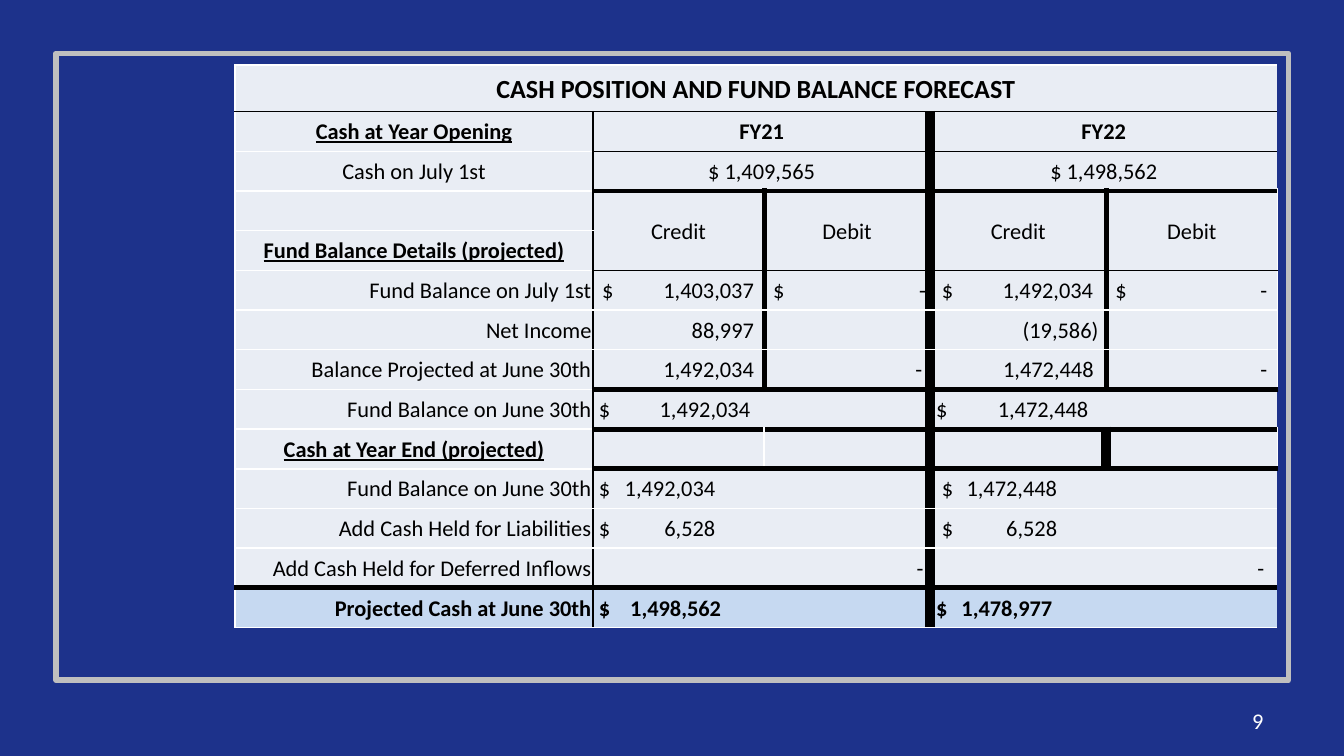
from lxml import etree
from pptx import Presentation
from pptx.dml.color import RGBColor
from pptx.enum import shapes, text
from pptx.oxml import ns
from pptx.util import Cm, Pt

NAVY = RGBColor(0x1D, 0x32, 0x8B)
GREY = RGBColor(0xBF, 0xBF, 0xBF)
PALE = RGBColor(0xE9, 0xED, 0xF4)
BLUE = RGBColor(0xC6, 0xD9, 0xF1)
BLACK = RGBColor(0, 0, 0)
WHITE = RGBColor(0xFF, 0xFF, 0xFF)
LEFT, MID, RIGHT = text.PP_ALIGN.LEFT, text.PP_ALIGN.CENTER, text.PP_ALIGN.RIGHT

WIDTHS = [6.77, 3.23, 3.14, 3.33, 3.23]
COUNT = 14
LAST = COUNT - 1
SPLIT = (3, 4, 5, 6, 7)
PAIRS = (1, 2, 8, 10, 11, 12, 13)
HEADS = {1: "Cash at Year Opening", 4: "Fund Balance Details (projected)",
         9: "Cash at Year End (projected)"}
LABELS = {5: "Fund Balance on July 1st", 6: "Net Income",
          7: "Balance Projected at June 30th", 8: "Fund Balance on June 30th",
          10: "Fund Balance on June 30th", 11: "Add Cash Held for Liabilities",
          12: "Add Cash Held for Deferred Inflows", 13: "Projected Cash at June 30th"}
CENTERED = [(2, 0, "Cash on July 1st"), (2, 1, "$ 1,409,565"), (2, 3, "$ 1,498,562"),
            (3, 1, "Credit"), (3, 2, "Debit"), (3, 3, "Credit"), (3, 4, "Debit")]
DOLLARS = [(5, 1, "1,403,037", 0.17, 3.04), (5, 2, "-", 0.17, 3.06),
           (5, 3, "1,492,034", 0.22, 3.08), (5, 4, "-", 0.17, 3.04),
           (8, 1, "1,492,034", 0.11, 2.97), (8, 3, "1,472,448", 0.11, 2.99),
           (10, 1, "1,492,034", 0.11, 2.31), (10, 3, "1,472,448", 0.22, 2.4),
           (11, 1, "6,528", 0.11, 2.31), (11, 3, "6,528", 0.22, 2.4),
           (13, 1, "1,498,562", 0.11, 2.42), (13, 3, "1,478,977", 0.11, 2.31)]
FIGURES = [(6, 1, "88,997", 0.19), (6, 3, "(19,586)", 0.15),
           (7, 1, "1,492,034", 0.19), (7, 2, "-", 0.15),
           (7, 3, "1,472,448", 0.24), (7, 4, "-", 0.19),
           (12, 1, "-", 0.13), (12, 3, "-", 0.25)]


def column_edge(row, edge):
    if edge in (0, 5):
        return 1, WHITE
    if row == 0:
        return 0, None
    if edge in (1, 3):
        return (1 if edge == 1 else 6), BLACK
    if row in SPLIT:
        return 3, BLACK
    if row == 9:
        return (1, WHITE) if edge == 2 else (6, BLACK)
    return 0, None


def row_edge(edge, col):
    if edge == 1:
        return 1, BLACK
    if edge == LAST:
        return 3, BLACK
    if col == 0:
        return 1, WHITE
    if edge == 4:
        return 0, None
    if edge in (2, 5):
        return 1, BLACK
    return (3, BLACK) if edge in (3, 8, 9, 10) else (1, WHITE)


def border(cell, side, weight, color):
    line = etree.SubElement(cell._tc.get_or_add_tcPr(), ns.qn("a:ln" + side))
    line.set("w", str(Pt(weight)))
    if weight:
        fill = etree.SubElement(line, ns.qn("a:solidFill"))
        etree.SubElement(fill, ns.qn("a:srgbClr")).set("val", str(color))
    else:
        etree.SubElement(line, ns.qn("a:noFill"))


def style(cell, row, col):
    border(cell, "L", *column_edge(row, col))
    border(cell, "R", *column_edge(row, col + 1))
    border(cell, "T", *row_edge(row, col))
    border(cell, "B", *row_edge(row + 1, col))
    cell.fill.solid()
    cell.fill.fore_color.rgb = BLUE if row == LAST else PALE
    cell.margin_left = cell.margin_right = cell.margin_top = Cm(0.03)
    cell.margin_bottom = 0
    cell.vertical_anchor = text.MSO_ANCHOR.MIDDLE
    write(cell, "", LEFT)


def write(cell, words, align, bold=False, under=False, size=12, color=BLACK):
    para = cell.text_frame.paragraphs[0]
    para.text = words
    para.alignment = align
    font = para.font
    font.name, font.size = "Calibri", Pt(size)
    font.bold, font.underline = bold, under
    font.color.rgb = color


def dollar(cell, value, left, edge, bold):
    cell.margin_left = Cm(left)
    props = cell.text_frame.paragraphs[0]._p.get_or_add_pPr()
    for child in list(props):
        props.remove(child)
    tabs = etree.SubElement(props, ns.qn("a:tabLst"))
    stop = etree.SubElement(tabs, ns.qn("a:tab"))
    stop.set("pos", str(Cm(edge - left)))
    stop.set("algn", "r")
    write(cell, "$\t" + value, LEFT, bold)


def figure(cell, value, gap):
    cell.margin_right = Cm(gap)
    write(cell, value, RIGHT)


def forecast(slide):
    frame = slide.shapes.add_table(COUNT, len(WIDTHS), Cm(4.44), Cm(1.23),
                                   Cm(sum(WIDTHS)), Cm(10.64))
    table = frame.table
    table.first_row = table.horz_banding = False
    for col, width in enumerate(WIDTHS):
        table.columns[col].width = Cm(width)
    for row in range(COUNT):
        table.rows[row].height = Cm(0.75 if row else 0.88)
        for col in range(len(WIDTHS)):
            style(table.cell(row, col), row, col)
    table.cell(0, 0).merge(table.cell(0, 4))
    for row in PAIRS:
        for col in (1, 3):
            table.cell(row, col).merge(table.cell(row, col + 1))
    for col in range(1, 5):
        table.cell(3, col).merge(table.cell(4, col))

    write(table.cell(0, 0), "CASH POSITION AND FUND BALANCE FORECAST", MID, True, size=14)
    for col, year in ((1, "FY21"), (3, "FY22")):
        write(table.cell(1, col), year, MID, True)
    for row, words in HEADS.items():
        write(table.cell(row, 0), words, MID, True, True)
    for row, words in LABELS.items():
        write(table.cell(row, 0), words, RIGHT, row == LAST)
    for row, col, words in CENTERED:
        write(table.cell(row, col), words, MID)
    for row, col, value, left, edge in DOLLARS:
        dollar(table.cell(row, col), value, left, edge, row == LAST)
    for row, col, value, gap in FIGURES:
        figure(table.cell(row, col), value, gap)


def outline(slide):
    box = slide.shapes.add_shape(shapes.MSO_SHAPE.RECTANGLE,
                                 Cm(1.06), Cm(1.01), Cm(23.29), Cm(11.85))
    box.shadow.inherit = False
    box.fill.background()
    box.line.color.rgb = GREY
    box.line.width = Pt(3)


def number(slide):
    box = slide.shapes.add_textbox(Cm(18.21), Cm(13.24), Cm(5.92), Cm(0.76))
    box.text_frame.word_wrap = True
    box.text_frame.vertical_anchor = text.MSO_ANCHOR.MIDDLE
    write(box, "9", RIGHT, color=WHITE)


def main():
    deck = Presentation()
    deck.slide_width, deck.slide_height = Cm(25.4), Cm(14.29)
    slide = deck.slides.add_slide(deck.slide_layouts[6])
    slide.background.fill.solid()
    slide.background.fill.fore_color.rgb = NAVY
    outline(slide)
    forecast(slide)
    number(slide)
    deck.save("out.pptx")


if __name__ == "__main__":
    main()
